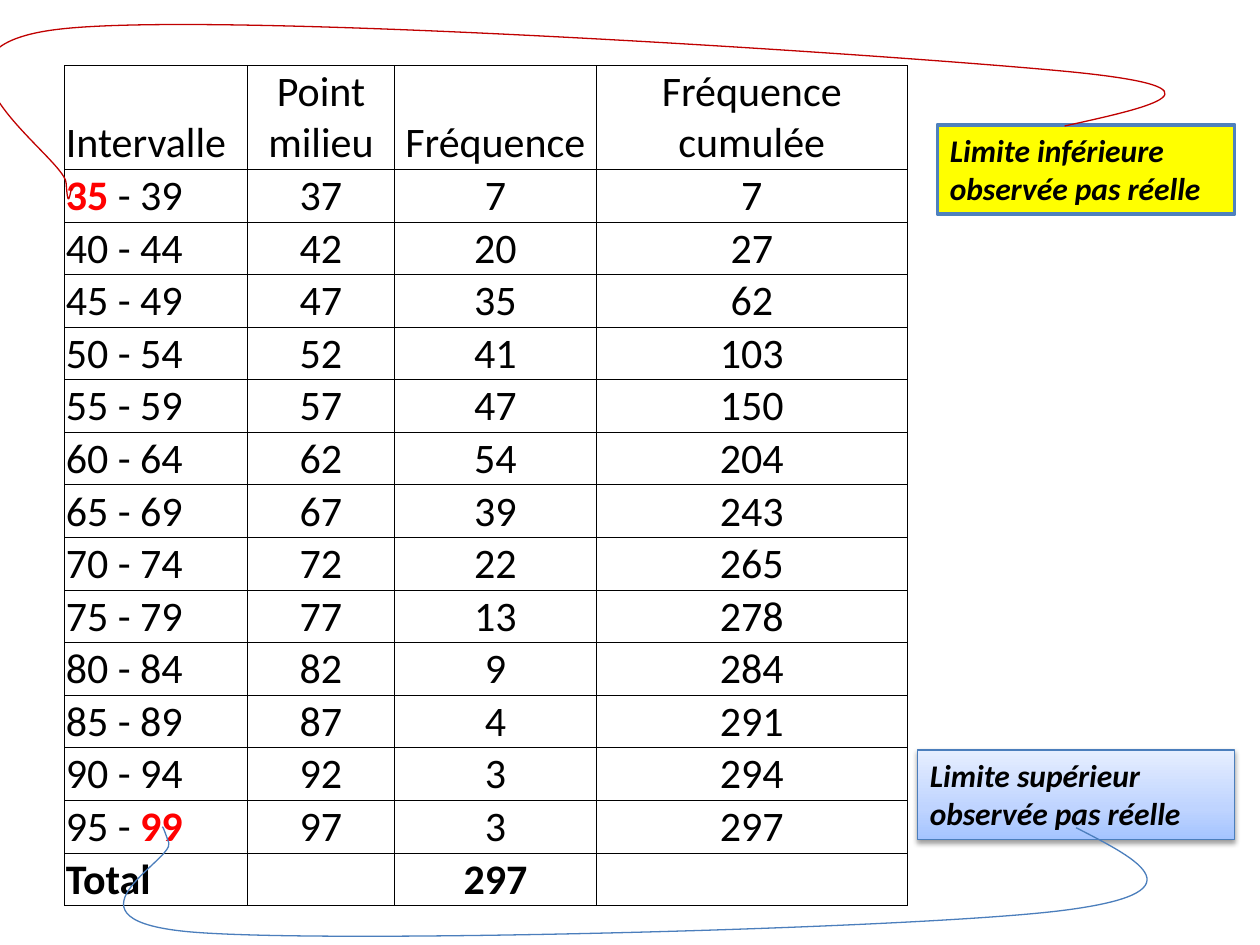
from lxml import etree
from pptx import Presentation, util as u
from pptx.dml.color import RGBColor
from pptx.enum import shapes, text
from pptx.oxml import parse_xml
from pptx.oxml.ns import nsdecls, qn

COLOURS = {
    "ink": "000000", "red": "FF0000", "yellow": "FFFF00", "border": "4F81BD",
    "dark_red": "C00000", "blue": "4B7EBC",
    "sky_bottom": "A4C4FF", "sky_middle": "BFD4FF", "sky_top": "E6EEFF",
}
FREQUENCIES = [7, 20, 35, 41, 47, 54, 39, 22, 13, 9, 4, 3, 3]
CUMULATED = [7, 27, 62, 103, 150, 204, 243, 265, 278, 284, 291, 294, 297]
FIRST_LIMIT, CLASS_STEP = 35, 5

LOWER_CURVE = [
    (608.4, 72), (657.4, 61.2), (707, 50.4), (611.3, 41), (515.5, 31.7),
    (130.3, 5.8), (34.6, 16.6), (-61.2, 27.4), (36.7, 89.3), (37.8, 104.4),
    (38.9, 119.5), (39.6, 113), (41, 107.3),
]
UPPER_CURVE = [
    (614.9, 473), (651.6, 491.8), (688.3, 510.5), (604.8, 520.6),
    (521.3, 530.6), (196.6, 539.3), (111.6, 532.8), (27.4, 526.3),
    (99.4, 491.8), (96.5, 481.7), (92.9, 471.6), (92.9, 472.3), (92.9, 473),
]


def colour(name):
    return RGBColor.from_string(COLOURS[name])


class Sketch:
    def __init__(self, slide, font="Calibri"):
        self.slide = slide
        self.font = font

    def style(self, span, size, name="ink", bold=False, italic=False):
        font = span.font
        font.name, font.size = self.font, u.Pt(size)
        font.bold, font.italic = bold, italic
        font.color.rgb = colour(name)

    def cell(self, cell, spans, centred):
        """Fill a cell with (text, colour, bold) spans and draw its borders."""
        cell.margin_left = cell.margin_right = cell.margin_top = u.Pt(0.72)
        cell.margin_bottom = 0
        cell.vertical_anchor = text.MSO_ANCHOR.BOTTOM
        para = cell.text_frame.paragraphs[0]
        if centred:
            para.alignment = text.PP_ALIGN.CENTER
        for words, name, bold in spans:
            span = para.add_run()
            span.text = words
            self.style(span, 24, name, bold)
        cell.fill.background()
        properties = cell._tc.get_or_add_tcPr()
        for index, side in enumerate("LRTB"):
            properties.insert(index, parse_xml(
                f'<a:ln{side} {nsdecls("a")} w="6350"><a:solidFill>'
                f'<a:srgbClr val="{COLOURS["ink"]}"/></a:solidFill></a:ln{side}>'))

    def table(self, left, top, widths, heights, rows):
        table = self.slide.shapes.add_table(
            len(rows), len(widths), u.Pt(left), u.Pt(top),
            u.Pt(sum(widths)), u.Pt(sum(heights))).table
        table.first_row = table.horz_banding = False
        for column, width in zip(table.columns, widths):
            column.width = u.Pt(width)
        for r, (height, row) in enumerate(zip(heights, rows)):
            table.rows[r].height = u.Pt(height)
            for c, spans in enumerate(row):
                self.cell(table.cell(r, c), spans, centred=c > 0)

    def box(self, left, top, width, height, words, line, weight):
        box = self.slide.shapes.add_shape(
            shapes.MSO_SHAPE.RECTANGLE,
            *map(u.Pt, (left, top, width, height)))
        box.shadow.inherit = False
        box.line.color.rgb = colour(line)
        box.line.width = u.Pt(weight)
        frame = box.text_frame
        frame.text = words
        frame.word_wrap = True
        frame.vertical_anchor = text.MSO_ANCHOR.TOP
        para = frame.paragraphs[0]
        para.alignment = text.PP_ALIGN.LEFT
        self.style(para.runs[0], 18, bold=True, italic=True)
        return box

    def fill_sky(self, box):
        """Give a box a vertical three-stop gradient and a soft shadow."""
        box.fill.gradient()
        box.fill.gradient_angle = 90
        stops = box._element.spPr.find(qn("a:gradFill")).find(qn("a:gsLst"))
        for stop in list(stops):
            stops.remove(stop)
        for place, name in ((0, "sky_bottom"), (35, "sky_middle"), (100, "sky_top")):
            stops.append(parse_xml(
                f'<a:gs {nsdecls("a")} pos="{place * 1000}">'
                f'<a:srgbClr val="{COLOURS[name]}"/></a:gs>'))
        box._element.spPr.find(qn("a:effectLst")).append(parse_xml(
            f'<a:outerShdw {nsdecls("a")} blurRad="{u.Pt(3.1)}" '
            f'dist="{u.Pt(1.6)}" dir="5400000" rotWithShape="0">'
            f'<a:srgbClr val="{COLOURS["ink"]}"><a:alpha val="38000"/>'
            '</a:srgbClr></a:outerShdw>'))

    def curve(self, points, line):
        """Draw cubic curves: a start, then two handles and an end for each."""
        start, *others = [(u.Pt(x), u.Pt(y)) for x, y in points]
        builder = self.slide.shapes.build_freeform(*start)
        builder.add_line_segments(others, close=False)
        curve = builder.convert_to_shape()
        curve.shadow.inherit = False
        curve.fill.background()
        curve.line.color.rgb = colour(line)
        curve.line.width = u.Pt(0.75)
        segments = list(curve._element.iter(qn("a:lnTo")))
        outline = segments[0].getparent()
        for index in range(0, len(segments), 3):
            bezier = etree.SubElement(outline, qn("a:cubicBezTo"))
            for segment in segments[index:index + 3]:
                bezier.append(segment[0])
                outline.remove(segment)


def plain(*values, bold=False):
    return [[(str(value), "ink", bold)] if value != "" else [] for value in values]


def table_rows():
    rows = [plain("Intervalle", "Point milieu", "Fréquence", "Fréquence cumulée")]
    for index, (frequency, total) in enumerate(zip(FREQUENCIES, CUMULATED)):
        low = FIRST_LIMIT + CLASS_STEP * index
        high = low + CLASS_STEP - 1
        rows.append(plain(f"{low} - {high}", (low + high) // 2, frequency, total))
    rows[1][0] = [("35", "red", True), (" - 39", "ink", False)]
    rows[-1][0] = [("95 - ", "ink", False), ("99", "red", True)]
    rows.append(plain("Total", "", sum(FREQUENCIES), "", bold=True))
    return rows


def main():
    deck = Presentation()
    deck.slide_width, deck.slide_height = u.Pt(720), u.Pt(540)
    sketch = Sketch(deck.slides.add_slide(deck.slide_layouts[6]))

    rows = table_rows()
    heights = [59.4] + [30.05] * (len(rows) - 1)
    sketch.table(36.9, 37.4, [104.4, 84.2, 115.2, 177.8], heights, rows)

    lower = sketch.box(535.7, 71.3, 169.9, 51.1,
                       "Limite inférieure observée pas réelle", "border", 2)
    lower.fill.solid()
    lower.fill.fore_color.rgb = colour("yellow")
    sketch.curve(LOWER_CURVE, "dark_red")

    upper = sketch.box(524.2, 428.6, 181.4, 51.1,
                       "Limite supérieur observée pas réelle", "blue", 0.75)
    sketch.fill_sky(upper)
    sketch.curve(UPPER_CURVE, "blue")

    deck.save("out.pptx")


if __name__ == "__main__":
    main()
